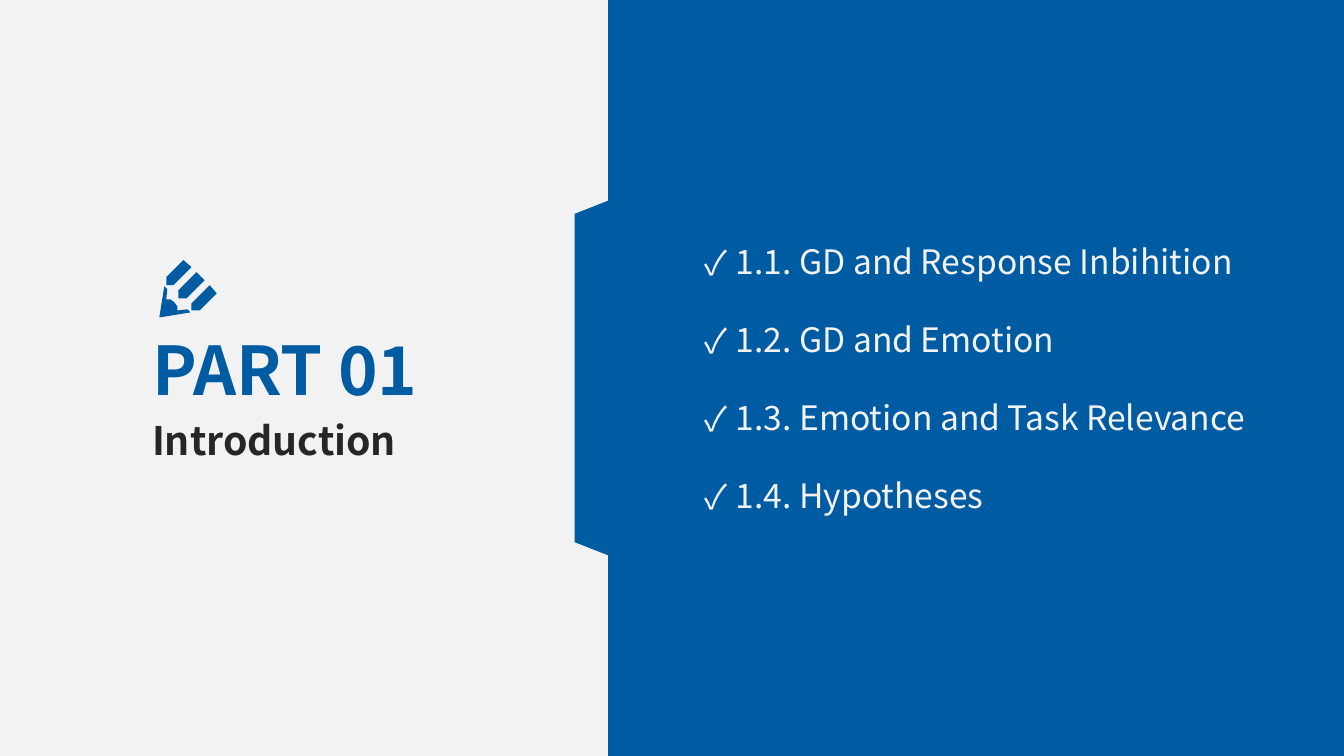
from dataclasses import dataclass

from lxml import etree
from pptx import Presentation
from pptx import util as u
from pptx.dml.color import RGBColor
from pptx.enum import shapes, text
from pptx.oxml.ns import qn

# Grid of square cells, 100 to the inch
CELL = u.Inches(0.01)
COLUMNS, ROWS = 1333, 750
PANEL_LEFT = 570
FONT = "Noto Sans CJK SC"
COLORS = {"blue": "005CA2", "light": "F2F2F2", "dark": "262626"}

Outline = list[tuple[int, int]]


@dataclass(frozen=True)
class Style:
    size: int
    color: str
    bold: bool = False


@dataclass(frozen=True)
class Topic:
    label: str
    columns: int


PART = Style(48, "blue", True)
SECTION = Style(28, "dark", True)
TOPIC = Style(24, "light")

TOPICS = [
    Topic("1.1. GD and Response Inbihition", 563),
    Topic("1.2. GD and Emotion", 385),
    Topic("1.3. Emotion and Task Relevance", 584),
    Topic("1.4. Hypotheses", 310),
]
TOPIC_LEFT, TOPIC_TOP, TOPIC_PITCH, TOPIC_ROWS = 689, 234, 77.3, 50

UPPER_MASK: Outline = [(570, 212), (603, 199), (603, 0), (537, 0), (537, 199)]
LOWER_MASK: Outline = [(x, ROWS - y) for x, y in UPPER_MASK]

PENCIL: list[Outline] = [
    [(177, 296), (185, 296), (203, 278), (195, 270), (177, 288)],
    [(190, 265), (182, 258), (165, 275), (165, 283), (172, 283)],
    [(186, 307), (176, 308), (176, 304), (173, 300), (169, 297), (165, 297),
     (166, 287), (163, 284), (158, 315), (189, 310)],
    [(215, 291), (208, 283), (190, 301), (190, 308), (198, 308)],
]


def color(name: str) -> RGBColor:
    return RGBColor.from_string(COLORS[name])


def cells(count: float) -> int:
    return round(count * CELL)


def paint(shape, fill: str) -> None:
    shape.shadow.inherit = False
    shape.fill.solid()
    shape.fill.fore_color.rgb = color(fill)
    shape.line.fill.background()


def add_outlines(slide, outlines: list[Outline], fill: str) -> None:
    """Draw closed polygons as one freeform."""
    first, *others = outlines
    builder = slide.shapes.build_freeform(*first[0], scale=CELL)
    builder.add_line_segments(first[1:])
    for outline in others:
        builder.move_to(*outline[0])
        builder.add_line_segments(outline[1:])
    paint(builder.convert_to_shape(), fill)


def write(box, label: str, style: Style, wrap: bool = True):
    """Fill a text shape with one left-aligned paragraph and return it."""
    frame = box.text_frame
    frame.word_wrap = wrap
    frame.auto_size = text.MSO_AUTO_SIZE.SHAPE_TO_FIT_TEXT
    frame.vertical_anchor = text.MSO_ANCHOR.TOP
    paragraph = frame.paragraphs[0]
    paragraph.text = label
    paragraph.alignment = text.PP_ALIGN.LEFT
    paragraph.font.name = FONT
    paragraph.font.size = u.Pt(style.size)
    paragraph.font.bold = style.bold
    paragraph.font.color.rgb = color(style.color)
    return paragraph


def add_check(paragraph) -> None:
    """Give the paragraph a hanging check-mark bullet."""
    properties = paragraph._p.get_or_add_pPr()
    properties.set("marL", str(cells(31)))
    properties.set("indent", str(-cells(31)))
    bullet_font = etree.Element(qn("a:buFont"), typeface=FONT)
    bullet = etree.Element(qn("a:buChar"), char="✓")
    properties.insert(0, bullet_font)
    properties.insert(1, bullet)


def add_topic(slide, topic: Topic, row: int) -> None:
    box = slide.shapes.add_textbox(
        cells(TOPIC_LEFT), cells(TOPIC_TOP + row * TOPIC_PITCH),
        cells(topic.columns), cells(TOPIC_ROWS))
    add_check(write(box, topic.label, TOPIC, wrap=False))


def main() -> None:
    deck = Presentation()
    deck.slide_width, deck.slide_height = cells(COLUMNS), cells(ROWS)
    slide = deck.slides.add_slide(deck.slide_layouts[5])
    slide.background.fill.solid()
    slide.background.fill.fore_color.rgb = color("light")

    panel = slide.shapes.add_shape(
        shapes.MSO_SHAPE.RECTANGLE, cells(PANEL_LEFT), 0,
        cells(COLUMNS - PANEL_LEFT), cells(ROWS))
    paint(panel, "blue")
    for mask in (LOWER_MASK, UPPER_MASK):
        add_outlines(slide, [mask], "light")

    part = slide.shapes.title
    part.left, part.top = cells(141), cells(321)
    part.width, part.height = cells(388), cells(91)
    write(part, "PART 01", PART)
    section = slide.shapes.add_textbox(
        cells(141), cells(408), cells(388), cells(57))
    write(section, "Introduction", SECTION)
    add_outlines(slide, PENCIL, "blue")

    for row, topic in enumerate(TOPICS):
        add_topic(slide, topic, row)
    deck.save("out.pptx")


if __name__ == "__main__":
    main()
